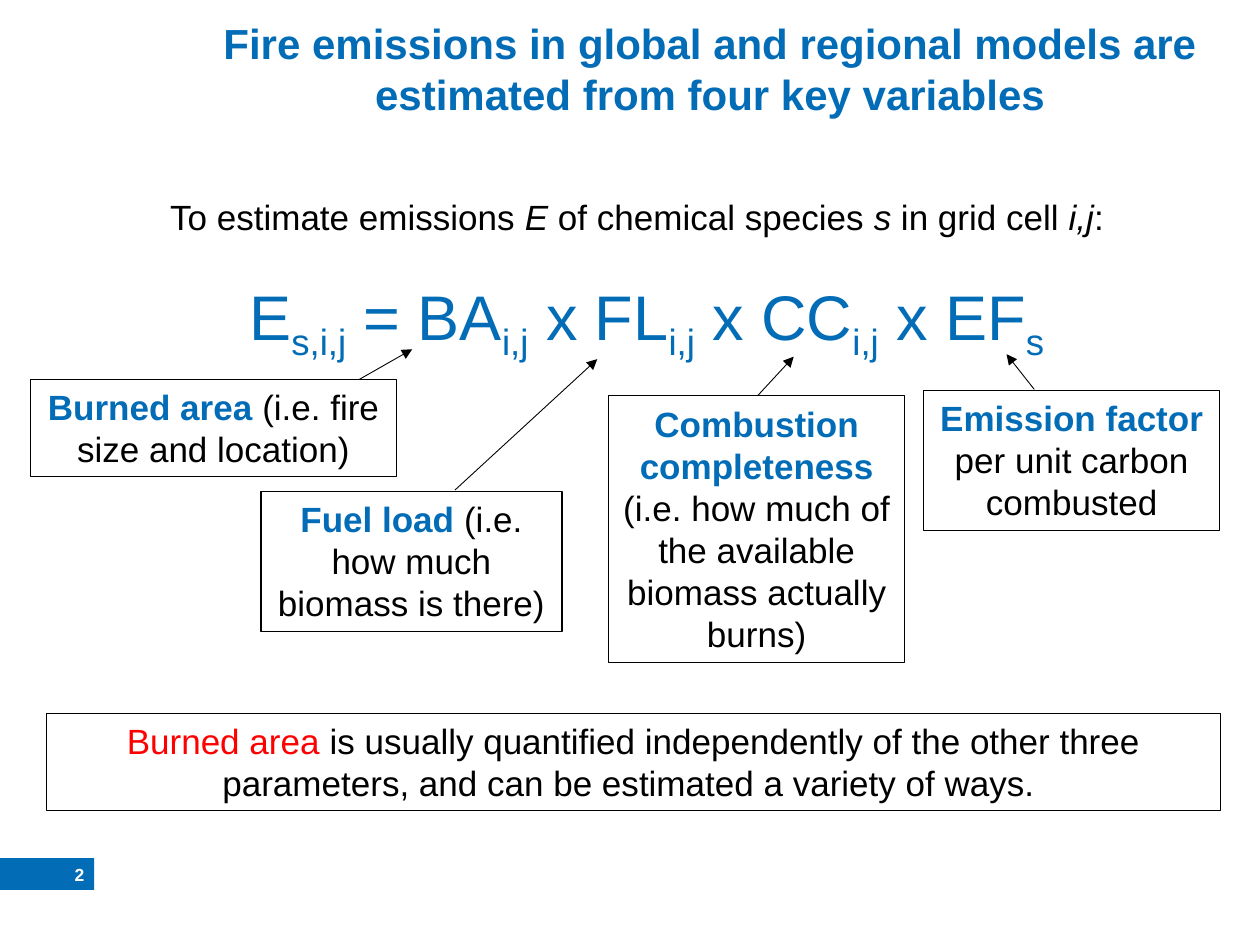
from lxml import etree
from pptx import Presentation
from pptx.dml.color import RGBColor
from pptx.enum.shapes import MSO_CONNECTOR, MSO_SHAPE
from pptx.enum.text import MSO_ANCHOR, MSO_AUTO_SIZE, PP_ALIGN
from pptx.oxml.ns import qn
from pptx.util import Cm, Pt

BLUE = RGBColor(0x02, 0x6C, 0xB6)
BLACK = RGBColor(0, 0, 0)
RED = RGBColor(0xFF, 0, 0)
WHITE = RGBColor(0xFF, 0xFF, 0xFF)

LEFT, CENTER, RIGHT = PP_ALIGN.LEFT, PP_ALIGN.CENTER, PP_ALIGN.RIGHT
TOP, MIDDLE = MSO_ANCHOR.TOP, MSO_ANCHOR.MIDDLE
NO_AUTOSIZE = MSO_AUTO_SIZE.NONE
RECTANGLE = MSO_SHAPE.RECTANGLE
STRAIGHT = MSO_CONNECTOR.STRAIGHT
TITLE_ONLY = 5


class SlideBuilder:
    """Holds the style and the current slide; boxes are (left, top, width, height) in cm."""

    font_name = "Arial"
    body_size = 20

    def __init__(self, presentation):
        self.slide = presentation.slides.add_slide(presentation.slide_layouts[TITLE_ONLY])

    def fill_text(self, shape, runs, size, align, anchor=TOP):
        """Fill a shape with one paragraph of (text, colour, style) runs."""
        frame = shape.text_frame
        frame.word_wrap = True
        frame.auto_size = NO_AUTOSIZE
        frame.vertical_anchor = anchor
        paragraph = frame.paragraphs[0]
        paragraph.alignment = align
        for text, color, style in runs:
            run = paragraph.add_run()
            run.text = text
            font = run.font
            font.name, font.size = self.font_name, Pt(size)
            font.color.rgb = color
            font.bold = style == "bold"
            font.italic = style == "italic"
            if style == "subscript":
                run._r.get_or_add_rPr().set("baseline", "-25000")

    def title(self, text, box):
        shape = self.slide.shapes.title
        shape.left, shape.top, shape.width, shape.height = map(Cm, box)
        self.fill_text(shape, [(text, BLUE, "bold")], 24, CENTER)

    def text(self, runs, box, size=body_size, align=LEFT, anchor=TOP):
        shape = self.slide.shapes.add_textbox(*map(Cm, box))
        self.fill_text(shape, runs, size, align, anchor)
        return shape

    def rectangle(self, box):
        shape = self.slide.shapes.add_shape(RECTANGLE, *map(Cm, box))
        shape.shadow.inherit = False
        return shape

    def bar(self, box):
        shape = self.rectangle(box)
        shape.fill.solid()
        shape.fill.fore_color.rgb = BLUE
        shape.line.fill.background()

    def framed_text(self, runs, box):
        shape = self.rectangle(box)
        shape.fill.background()
        shape.line.color.rgb = BLACK
        shape.line.width = Pt(0.75)
        self.fill_text(shape, runs, self.body_size, CENTER)

    def arrow(self, start, end):
        connector = self.slide.shapes.add_connector(STRAIGHT, *map(Cm, start + end))
        connector.line.color.rgb = BLACK
        connector.line.width = Pt(0.5)
        properties = connector._element.spPr
        etree.SubElement(properties.find(qn("a:ln")), qn("a:tailEnd"), type="triangle")
        etree.SubElement(properties, qn("a:effectLst"))


def main():
    presentation = Presentation()
    presentation.slide_width, presentation.slide_height = Cm(25.4), Cm(19.05)
    builder = SlideBuilder(presentation)

    # Title and introduction
    builder.bar((0, 17.3, 1.9, 0.64))
    builder.title("Fire emissions in global and regional models are estimated from four key variables",
                  (2.34, 0.23, 23.95, 1.85))
    intro = ["To estimate emissions ", "E", " of chemical species ", "s",
             " in grid cell ", "i,j", ":"]
    builder.text([(text, BLACK, "italic" if index % 2 else "")
                  for index, text in enumerate(intro)], (3.18, 3.81, 23.11, 1.12))

    # Conclusion
    builder.framed_text(
        [("Burned area", RED, ""),
         (" is usually quantified independently of the other three parameters, "
          "and can be estimated a variety of ways. ", BLACK, "")],
        (0.94, 14.38, 23.67, 1.96))

    # Equation: symbols alternate with their subscripts
    equation = ["E", "s,i,j", " = BA", "i,j", " x FL", "i,j", " x CC", "i,j", " x EF", "s"]
    builder.text([(text, BLUE, "subscript" if index % 2 else "")
                  for index, text in enumerate(equation)],
                 (3.68, 5.46, 18.72, 1.8), 36, CENTER)

    # Explanation of each variable, with an arrow to its symbol
    variables = [
        ("Burned area ", "(i.e. fire size and location)",
         (0.61, 7.65, 7.39, 1.96), (7.24, 7.65), (8.31, 7.04)),
        ("Fuel load ", "(i.e. how much biomass is there)",
         (5.26, 9.91, 6.07, 2.82), (9.17, 9.88), (12.04, 7.24)),
        ("Combustion completeness ", "(i.e. how much of the available biomass actually burns)",
         (12.27, 7.98, 5.97, 5.38), (15.27, 7.98), (16, 7.19)),
        ("Emission factor ", "per unit carbon combusted",
         (18.62, 7.87, 5.97, 2.82), (20.85, 7.85), (20.29, 7.14)),
    ]
    for name, meaning, box, start, end in variables:
        builder.framed_text([(name, BLUE, "bold"), (meaning, BLACK, "")], box)
        builder.arrow(start, end)

    # Slide number
    number = builder.text([("2", WHITE, "bold")], (0, 17.3, 1.7, 0.64), 10, RIGHT, MIDDLE)
    frame = number.text_frame
    frame.margin_left = frame.margin_right = frame.margin_top = frame.margin_bottom = 0

    presentation.save("out.pptx")


if __name__ == "__main__":
    main()
